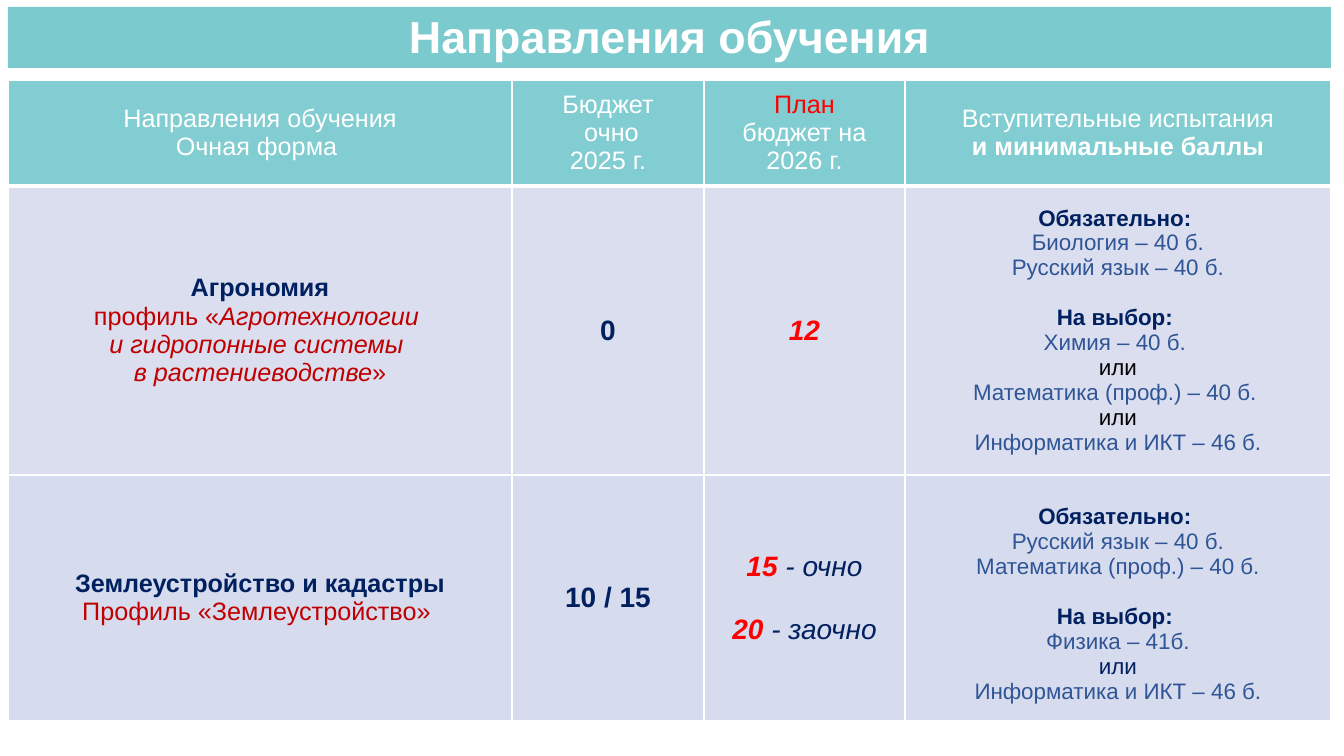
import pptx
import pptx.util
import pptx.dml.color
import pptx.enum.shapes
import pptx.enum.text
import pptx.oxml
import pptx.oxml.ns

PX = 914400 / 100.8
MID = pptx.enum.text.MSO_ANCHOR.MIDDLE
MAIN = pptx.oxml.ns.nsdecls("a")

# Colours, type sizes and text styles; gap is the space above in points
THEME = {
    "font": "Arial",
    "teal": "4EB9BE",
    "pale": "CFD5EA",
    "rule": "FFFFFF",
    "text": {
        "title": dict(color="FFFFFF", size=32, bold=True),
        "head": dict(color="FFFFFF", size=18),
        "strong": dict(color="FFFFFF", size=18, bold=True),
        "alert": dict(color="FF0000", size=18),
        "name": dict(color="002060", size=18, bold=True),
        "track": dict(color="C00000", size=18),
        "slant": dict(color="C00000", size=18, italic=True),
        "count": dict(color="002060", size=20, bold=True),
        "plan": dict(color="FF0000", size=20, bold=True, italic=True, gap=23),
        "mode": dict(color="002060", size=20, italic=True),
        "group": dict(color="002060", size=16, bold=True, gap=18),
        "exam": dict(color="2F5597", size=16),
        "or": dict(color="000000", size=16),
        "or2": dict(color="002060", size=16),
    },
}

COLS = [504, 192, 201, 426]
ROWS = [106, 289, 246]
ALPHA = [70, 77, 85]

# Each cell is a list of lines, each line a list of (text, style) runs
CELLS = [
    [
        [[("Направления обучения", "head")], [("Очная форма ", "head")]],
        [[("Бюджет", "head")], [(" очно", "head")], [("2025 г.", "head")]],
        [[("План", "alert")], [("бюджет на", "head")], [("2026 г.", "head")]],
        [[("Вступительные испытания", "head")],
         [("и минимальные баллы", "strong")]],
    ],
    [
        [[("Агрономия", "name")],
         [("профиль «", "track"), ("Агротехнологии ", "slant")],
         [("и гидропонные системы ", "slant")],
         [("в растениеводстве", "slant"), ("»", "track")]],
        [[("0", "count")]],
        [[("12", "plan")]],
        [[("Обязательно: ", "group")],
         [("Биология – 40 б.", "exam")],
         [("Русский язык – 40 б.", "exam")],
         [("На выбор: ", "group")],
         [("Химия – 40 б. ", "exam")],
         [("или", "or")],
         [("Математика (проф.) – 40 б. ", "exam")],
         [("или", "or")],
         [("Информатика и ИКТ – 46 б.", "exam")]],
    ],
    [
        [[("Землеустройство и кадастры", "name")],
         [("Профиль «Землеустройство» ", "track")]],
        [[("10 / 15", "count")]],
        [[("15 ", "plan"), ("- очно", "mode")],
         [("20 ", "plan"), ("- заочно", "mode")]],
        [[("Обязательно: ", "group")],
         [("Русский язык – 40 б.", "exam")],
         [("Математика (проф.) – 40 б.", "exam")],
         [("На выбор: ", "group")],
         [("Физика – 41б.", "exam")],
         [("или", "or2")],
         [("Информатика и ИКТ – 46 б.", "exam")]],
    ],
]


def px(num):
    return pptx.util.Emu(round(num * PX))


def tint(fill, color, alpha):
    fill.solid()
    fill.fore_color.rgb = pptx.dml.color.RGBColor.from_string(color)
    tag = pptx.oxml.parse_xml(f'<a:alpha {MAIN} val="{alpha * 1000}"/>')
    fill._xPr.find(".//" + pptx.oxml.ns.qn("a:srgbClr")).append(tag)


def write(frame, lines):
    for num, line in enumerate(lines):
        para = frame.add_paragraph() if num else frame.paragraphs[0]
        para.alignment = pptx.enum.text.PP_ALIGN.CENTER
        gap = THEME["text"][line[0][1]].get("gap", 0)
        para.space_before = pptx.util.Pt(gap if num else 0)
        for text, key in line:
            look = THEME["text"][key]
            run = para.add_run()
            run.text = text
            form = {
                "name": THEME["font"],
                "size": pptx.util.Pt(look["size"]),
                "bold": look.get("bold", False),
                "italic": look.get("italic", False),
            }
            for attr, val in form.items():
                setattr(run.font, attr, val)
            run.font.color.rgb = pptx.dml.color.RGBColor.from_string(look["color"])


def edge(cell, base):
    # Borders come before the fill in the cell properties
    props = cell._tc.get_or_add_tcPr()
    for num, (side, width) in enumerate(zip("LRTB", (1, 1, 1, base))):
        props.insert(num, pptx.oxml.parse_xml(
            f'<a:ln{side} {MAIN} w="{width * 12700}"><a:solidFill>'
            f'<a:srgbClr val="{THEME["rule"]}"/></a:solidFill></a:ln{side}>'))


def banner(slide, left, top, width, height):
    box = [px(num) for num in (left, top, width, height)]
    band = slide.shapes.add_shape(pptx.enum.shapes.MSO_SHAPE.RECTANGLE, *box)
    band.shadow.inherit = False
    band.line.fill.background()
    tint(band.fill, THEME["teal"], 75)

    # Title sits in front of the band
    title = slide.shapes.title
    band._element.addnext(title._element)
    for attr, val in zip(("left", "top", "width", "height"), box):
        setattr(title, attr, val)
    frame = title.text_frame
    form = {
        "word_wrap": True,
        "vertical_anchor": MID,
        "auto_size": pptx.enum.text.MSO_AUTO_SIZE.NONE,
        "margin_top": 0,
        "margin_bottom": px(3),
    }
    for attr, val in form.items():
        setattr(frame, attr, val)
    write(frame, [[("Направления обучения", "title")]])


def grid(slide, left, top):
    table = slide.shapes.add_table(
        len(ROWS), len(COLS), px(left), px(top), px(sum(COLS)), px(sum(ROWS))).table
    for col, width in zip(table.columns, COLS):
        col.width = px(width)
    for num, (row, height) in enumerate(zip(table.rows, ROWS)):
        row.height = px(height)
        for cell, lines in zip(row.cells, CELLS[num]):
            cell.vertical_anchor = MID
            tint(cell.fill, THEME["pale" if num else "teal"], ALPHA[num])
            edge(cell, 1 if num else 3)
            write(cell.text_frame, lines)
    # The last exam list sits a little lower
    table.cell(2, 3).margin_top = px(18)


def main():
    deck = pptx.Presentation()
    deck.slide_width, deck.slide_height = px(1344), px(756)
    slide = deck.slides.add_slide(deck.slide_layouts[5])
    banner(slide, 8, 7, 1323, 61)
    grid(slide, 8, 80)
    deck.save("out.pptx")


if __name__ == "__main__":
    main()
